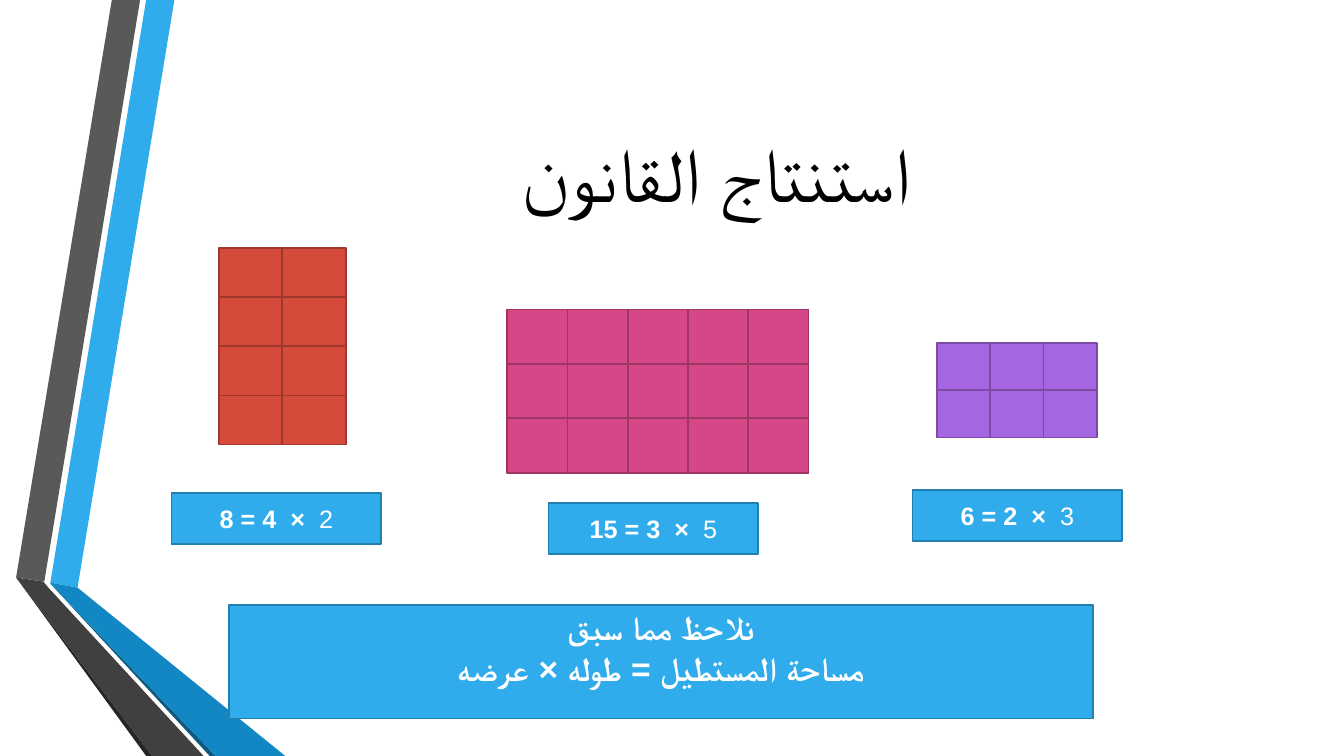
from lxml import etree
from pptx import Presentation
from pptx.dml.color import RGBColor
from pptx.enum.shapes import MSO_CONNECTOR, MSO_SHAPE
from pptx.enum.text import MSO_ANCHOR, PP_ALIGN
from pptx.oxml.ns import qn
from pptx.util import Inches, Pt

RECTANGLE = MSO_SHAPE.RECTANGLE
STRAIGHT = MSO_CONNECTOR.STRAIGHT
MIDDLE = MSO_ANCHOR.MIDDLE
CENTER = PP_ALIGN.CENTER

BLACK = RGBColor(0x00, 0x00, 0x00)
WHITE = RGBColor(0xFF, 0xFF, 0xFF)
BLUE = RGBColor(0x30, 0xAC, 0xEC)
BLUE_EDGE = RGBColor(0x24, 0x7F, 0xAF)
BLUE_SHADE = RGBColor(0x12, 0x87, 0xC3)
BLUE_DEEP = RGBColor(0x0C, 0x5A, 0x82)
GRAY = RGBColor(0x59, 0x59, 0x59)
GRAY_SHADE = RGBColor(0x40, 0x40, 0x40)
GRAY_DEEP = RGBColor(0x26, 0x26, 0x26)
RED = RGBColor(0xD6, 0x4A, 0x3B)
RED_EDGE = RGBColor(0x9E, 0x37, 0x2C)
PINK = RGBColor(0xD6, 0x47, 0x87)
PINK_EDGE = RGBColor(0x9E, 0x35, 0x64)
PURPLE = RGBColor(0xA6, 0x66, 0xE1)
PURPLE_EDGE = RGBColor(0x7B, 0x4B, 0xA6)
EDGE_WIDTH = Pt(1.25)


def add_box(shapes, left, top, width, height, fill, edge):
    box = shapes.add_shape(RECTANGLE, Inches(left), Inches(top), Inches(width), Inches(height))
    box.shadow.inherit = False
    box.fill.solid()
    box.fill.fore_color.rgb = fill
    box.line.color.rgb = edge
    box.line.width = EDGE_WIDTH
    return box


def style_arabic(paragraph, size, color):
    """Centre a right-to-left paragraph and set its Latin and Arabic font."""
    paragraph.alignment = CENTER
    paragraph._p.get_or_add_pPr().set("rtl", "1")
    font = paragraph.font
    font.name = "Arial"
    font.size = Pt(size)
    font.color.rgb = color
    etree.SubElement(font._rPr, qn("a:cs"), typeface="Arial")


prs = Presentation()
prs.slide_width = Inches(13.33)
prs.slide_height = Inches(7.5)
slide = prs.slides.add_slide(prs.slide_layouts[6])

# Folded ribbons on the left
ribbons = [
    (BLUE, [(0.5, 5.78), (0.77, 5.83), (1.73, 0), (1.45, 0)]),
    (GRAY, [(1.39, 0), (1.11, 0), (0.16, 5.73), (0.44, 5.77)]),
    (GRAY_DEEP, [(0.16, 5.73), (1.45, 7.5), (1.51, 7.5)]),
    (BLUE_DEEP, [(0.5, 5.79), (2.08, 7.5), (2.14, 7.5)]),
    (BLUE_SHADE, [(0.5, 5.79), (2.14, 7.5), (2.83, 7.5), (0.77, 5.83), (0.5, 5.78)]),
    (GRAY_SHADE, [(2.02, 7.5), (0.48, 5.83), (0.43, 5.77), (0.16, 5.73), (1.51, 7.5)]),
]
ribbon_group = slide.shapes.add_group_shape()
for color, corners in ribbons:
    points = [(Inches(x), Inches(y)) for x, y in corners]
    outline = ribbon_group.shapes.build_freeform(*points[0])
    outline.add_line_segments(points[1:], close=True)
    ribbon = outline.convert_to_shape()
    ribbon.shadow.inherit = False
    ribbon.fill.solid()
    ribbon.fill.fore_color.rgb = color
    ribbon.line.fill.background()

# Title
title = slide.shapes.add_textbox(Inches(1.62), Inches(0.75), Inches(10.96), Inches(1.92))
title.text_frame.word_wrap = True
title.text_frame.vertical_anchor = MIDDLE
title.text_frame.text = "استنتاج القانون"
style_arabic(title.text_frame.paragraphs[0], 54, BLACK)

# Conclusion
conclusion = add_box(slide.shapes, 2.27, 6, 8.57, 1.13, BLUE, BLUE_EDGE).text_frame
conclusion.vertical_anchor = MIDDLE
conclusion.margin_top = 0
conclusion.margin_bottom = Inches(0.28)
conclusion.text = "نلاحظ مما سبق\nمساحة المستطيل = طوله × عرضه"
for paragraph in conclusion.paragraphs:
    style_arabic(paragraph, 24, WHITE)
    paragraph.font.bold = True

# Rectangles divided into unit squares: left, top, width, height, columns, rows
unit_grids = [
    (9.29, 3.4, 1.59, 0.94, 3, 2, PURPLE, PURPLE_EDGE),
    (5.03, 3.07, 2.99, 1.62, 5, 3, PINK, PINK_EDGE),
    (2.17, 2.46, 1.26, 1.95, 2, 4, RED, RED_EDGE),
]
for left, top, width, height, columns, rows, fill, edge in unit_grids:
    grid = slide.shapes.add_group_shape()
    add_box(grid.shapes, left, top, width, height, fill, edge)
    right, bottom = left + width, top + height
    column_edges = [left + width * i / columns for i in range(1, columns)]
    row_edges = [top + height * i / rows for i in range(1, rows)]
    dividers = [(x, top, x, bottom) for x in column_edges]
    dividers += [(left, y, right, y) for y in row_edges]
    for ends in dividers:
        divider = grid.shapes.add_connector(STRAIGHT, *map(Inches, ends))
        divider.line.color.rgb = edge
        divider.line.width = EDGE_WIDTH
        etree.SubElement(divider._element.spPr, qn("a:effectLst"))

# Area of each rectangle
equations = [
    (9.05, 4.86, "3 ", " ×  2 = 6"),
    (5.44, 4.99, "5 ", " ×  3 = 15"),
    (1.7, 4.89, "2 ", " ×  4 = 8"),
]
for left, top, length, product in equations:
    equation = add_box(slide.shapes, left, top, 2.08, 0.51, BLUE, BLUE_EDGE).text_frame
    equation.vertical_anchor = MIDDLE
    paragraph = equation.paragraphs[0]
    style_arabic(paragraph, 18, WHITE)
    paragraph.add_run().text = length
    product_run = paragraph.add_run()
    product_run.text = product
    product_run.font.bold = True

prs.save("out.pptx")
